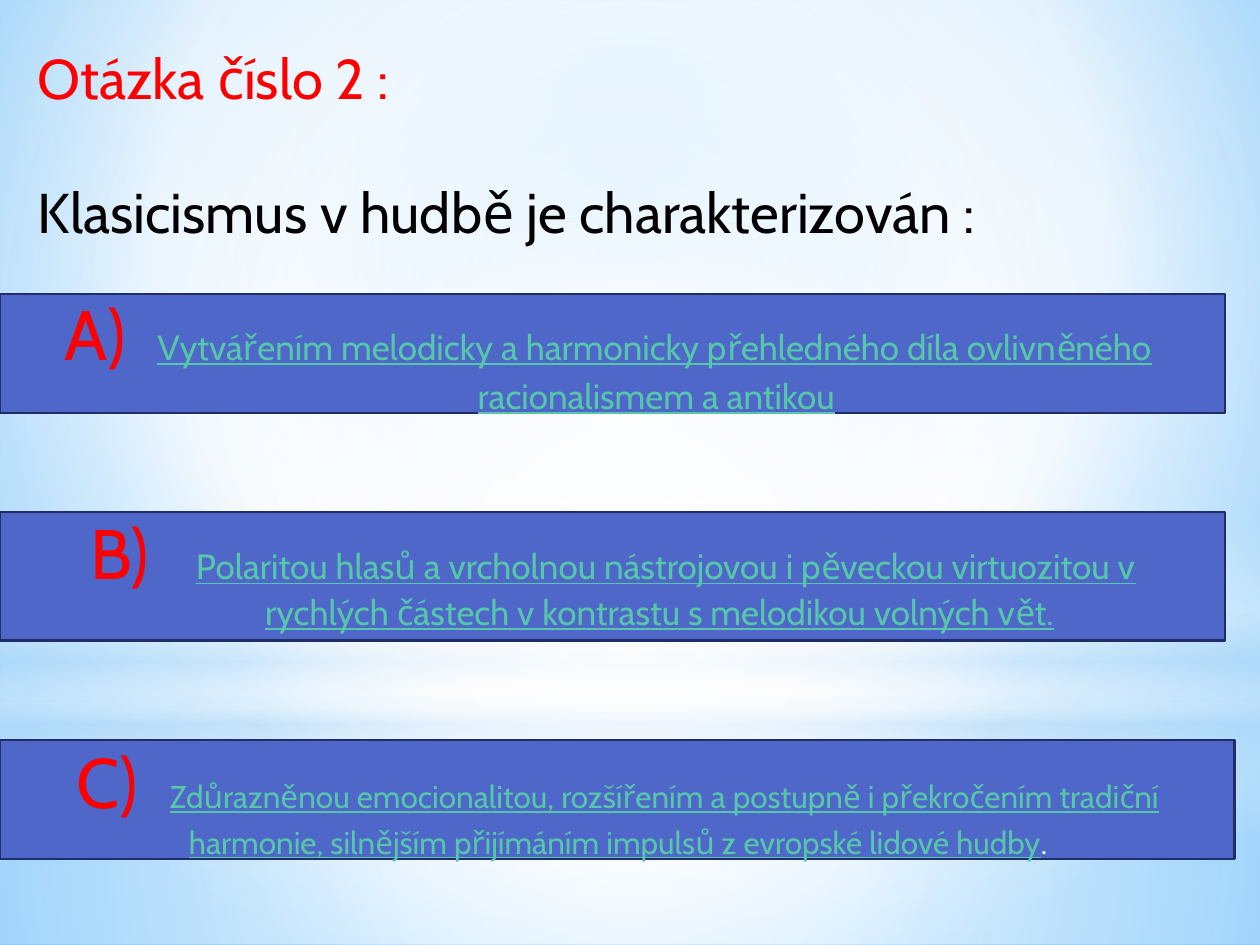
from dataclasses import dataclass

from lxml import etree
from pptx import Presentation
from pptx.dml.color import RGBColor
from pptx.enum.shapes import MSO_SHAPE
from pptx.enum.text import MSO_ANCHOR, MSO_AUTO_SIZE, PP_ALIGN
from pptx.oxml.ns import qn
from pptx.util import Pt


@dataclass
class Theme:
    font: str = "Cabin"
    red: str = "FF0000"
    black: str = "000000"
    white: str = "FFFFFF"
    mint: str = "56C7AA"
    bar: str = "4E67C8"
    edge: str = "1F2E69"
    head: int = 32
    mark: int = 40


T = Theme()
WIDE, HIGH = 720, 540

HEAD = [("Otázka číslo 2 :", T.red),
        ("Klasicismus v hudbě je charakterizován :", T.black)]

# box (top, width, height), mark and its left, text size, line spacing,
# then each line with its left, and a closing sign
BARS = [
    dict(box=(168, 700, 68), mark="A)", left=37, size=20, gap=1.0, tail="",
         lines=[(90, "Vytvářením melodicky a harmonicky přehledného díla ovlivněného"),
                (273, "racionalismem a antikou")]),
    dict(box=(292.5, 700, 73.5), mark="B)", left=52, size=20, gap=0.9, tail="",
         lines=[(112, "Polaritou hlasů a vrcholnou nástrojovou i pěveckou virtuozitou v"),
                (151.5, "rychlých částech v kontrastu s melodikou volných vět.")]),
    dict(box=(423, 705.5, 68), mark="C)", left=44, size=18, gap=1.0, tail=".",
         lines=[(97, "Zdůrazněnou emocionalitou, rozšířením a postupně i překročením tradiční"),
                (108, "harmonie, silnějším přijímáním impulsů z evropské lidové hudby")]),
]

# gradient stops: position, colour, opacity in percent
SKY = [(0, "9ED5FF", 100), (60, "FFFFFF", 100), (100, "5BB9FF", 100)]
MID = (50, 50, 50, 50)
VEILS = [
    (MSO_SHAPE.RECTANGLE, 402, 138, MID,
     [(0, "FFFFFF", 91), (37, "FFFFFF", 76), (100, "B4DCFA", 79)]),
    (MSO_SHAPE.RECTANGLE, 0, 402, MID,
     [(0, "FFFFFF", 89), (48, "FFFFFF", 62), (100, "B4DCFA", 79)]),
    (MSO_SHAPE.RECTANGLE, 297, 180, None,
     [(0, "FFFFFF", 0), (29, "FFFFFF", 30), (45, "B4DCFA", 40),
      (55, "FFFFFF", 26), (65, "B4DCFA", 60), (100, "FFFFFF", 0)]),
    (MSO_SHAPE.OVAL, 126, 402, MID, [(0, "FFFFFF", 100), (56, "FFFFFF", 0)]),
]


def blend(props, stops, rect):
    """Swap the solid fill in props for a gradient: round about rect, or downward."""
    grad = etree.Element(qn("a:gradFill"), rotWithShape="1")
    row = etree.SubElement(grad, qn("a:gsLst"))
    for pos, tint, alpha in stops:
        stop = etree.SubElement(row, qn("a:gs"), pos=str(pos * 1000))
        color = etree.SubElement(stop, qn("a:srgbClr"), val=tint)
        etree.SubElement(color, qn("a:alpha"), val=str(alpha * 1000))
    if rect:
        way = etree.SubElement(grad, qn("a:path"), path="circle")
        sides = {side: str(n * 1000) for side, n in zip("ltrb", rect)}
        etree.SubElement(way, qn("a:fillToRect"), **sides)
    else:
        etree.SubElement(grad, qn("a:lin"), ang="5400000", scaled="0")
    props.replace(props.find(qn("a:solidFill")), grad)


def write(para, text, size, tint, line=False):
    run = para.add_run()
    run.text = text
    run.font.name = T.font
    run.font.size = Pt(size)
    run.font.underline = line
    run.font.color.rgb = RGBColor.from_string(tint)


def shape_at(slide, kind, top, width, height):
    shape = slide.shapes.add_shape(kind, 0, Pt(top), Pt(width), Pt(height))
    shape.shadow.inherit = False
    shape.fill.solid()
    return shape


def add_sky(slide):
    slide.background.fill.solid()
    blend(slide._element.find(".//" + qn("p:bgPr")), SKY, (20, 10, 20, 60))
    tree = slide.slide_layout.shapes._spTree
    for spot, (kind, top, height, rect, stops) in enumerate(VEILS, 2):
        veil = shape_at(slide, kind, top, WIDE, height)
        veil.line.fill.background()
        blend(veil._element.spPr, stops, rect)
        tree.insert(spot, veil._element)  # belongs to the layout, behind all


def add_head(slide):
    title = slide.shapes.title
    title.left, title.top, title.width, title.height = map(Pt, (14.4, 21, 686, 124))
    frame = title.text_frame
    frame.word_wrap = True
    frame.auto_size = MSO_AUTO_SIZE.NONE
    frame.vertical_anchor = MSO_ANCHOR.TOP
    for i, (text, tint) in enumerate(HEAD):
        para = frame.add_paragraph() if i else frame.paragraphs[0]
        para.alignment = PP_ALIGN.LEFT
        para.space_before = Pt(38.5 * i)
        write(para, text, T.head, tint)


def add_bar(slide, bar):
    shape = shape_at(slide, MSO_SHAPE.RECTANGLE, *bar["box"])
    shape.fill.fore_color.rgb = RGBColor.from_string(T.bar)
    shape.line.color.rgb = RGBColor.from_string(T.edge)
    shape.line.width = Pt(1.25)
    frame = shape.text_frame
    frame.word_wrap = True
    frame.margin_left = frame.margin_right = 0
    frame.vertical_anchor = MSO_ANCHOR.MIDDLE
    for i, (left, text) in enumerate(bar["lines"]):
        para = frame.add_paragraph() if i else frame.paragraphs[0]
        para.alignment = PP_ALIGN.LEFT
        para.line_spacing = bar["gap"]
        props = para._p.get_or_add_pPr()
        props.set("marL", str(Pt(left)))
        if i == 0:  # the mark hangs, its tab leads to the text
            props.set("indent", str(Pt(bar["left"] - left)))
            write(para, bar["mark"] + "\t", T.mark, T.red)
        write(para, text, bar["size"], T.mint, True)
    if bar["tail"]:
        write(para, bar["tail"], bar["size"], T.white)


def main():
    deck = Presentation()
    deck.slide_width, deck.slide_height = Pt(WIDE), Pt(HIGH)
    slide = deck.slides.add_slide(deck.slide_layouts[5])
    add_sky(slide)
    add_head(slide)
    for bar in BARS:
        add_bar(slide, bar)
    deck.save("out.pptx")


if __name__ == "__main__":
    main()
